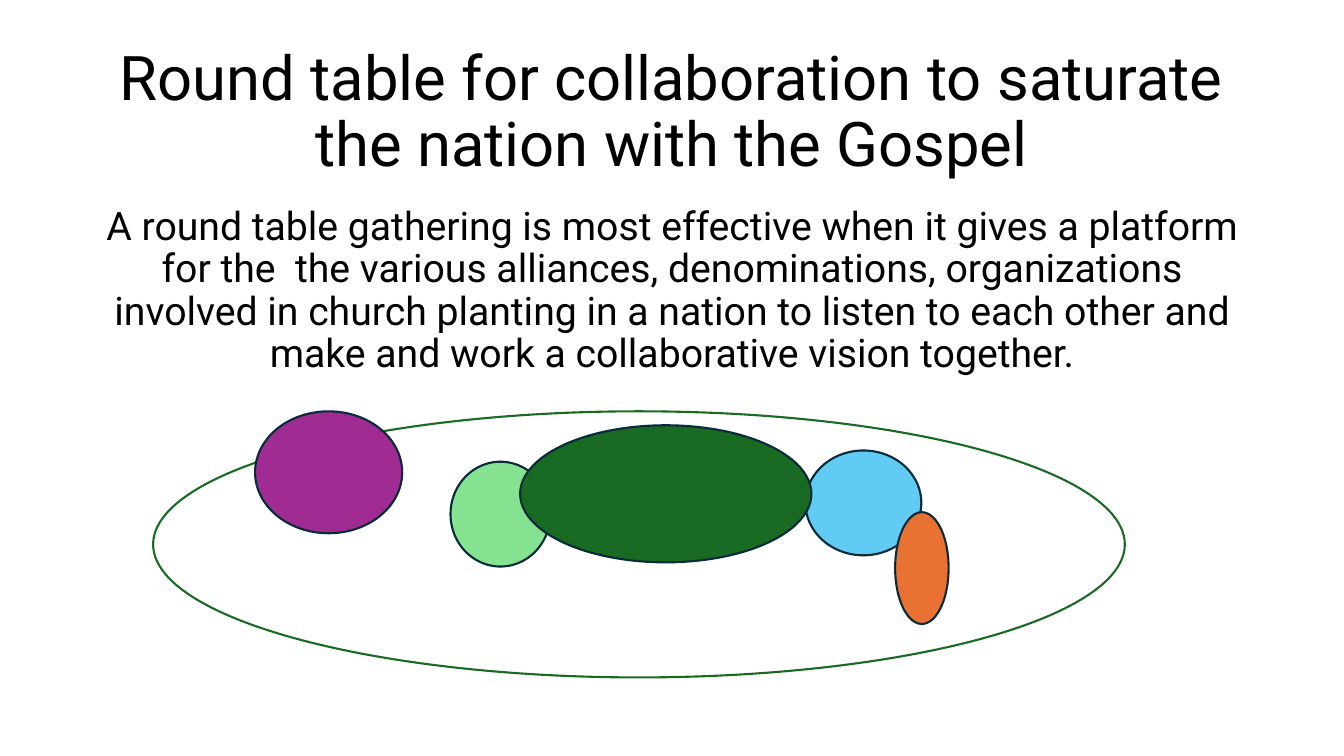
from pptx import Presentation
from pptx.dml.color import RGBColor
from pptx.enum.shapes import MSO_SHAPE
from pptx.enum.text import MSO_ANCHOR, MSO_AUTO_SIZE, PP_ALIGN
from pptx.util import Pt

COLORS = {
    "text": "000000", "white": "FFFFFF", "outline": "092A39",
    "green": "196B24", "purple": "A02B93", "mint": "84E291",
    "sky": "61CBF4", "orange": "E97132",
}


def color(name):
    return RGBColor.from_string(COLORS[name])


def write(shape, text, size, anchor):
    tf = shape.text_frame
    tf.word_wrap = True
    tf.auto_size = MSO_AUTO_SIZE.NONE
    tf.vertical_anchor = anchor
    p = tf.paragraphs[0]
    p.text = text
    p.alignment = PP_ALIGN.CENTER
    p.line_spacing = 0.9
    p.space_before = Pt(0)
    p.font.name = "Roboto"
    p.font.size = Pt(size)
    p.font.color.rgb = color("text")


prs = Presentation()
prs.slide_width, prs.slide_height = Pt(960), Pt(540)
s = prs.slides.add_slide(prs.slide_layouts[5])

# Title
title = s.shapes.title
title.left, title.top, title.width, title.height = Pt(66), Pt(28.8), Pt(828), Pt(104.4)
write(title, "Round table for collaboration to saturate the nation with the Gospel",
      44, MSO_ANCHOR.MIDDLE)

# Body text
body = s.shapes.add_textbox(Pt(66), Pt(144), Pt(828), Pt(342.7))
write(body, "A round table gathering is most effective when it gives a platform "
      "for the  the various alliances, denominations, organizations involved in "
      "church planting in a nation to listen to each other and make and work a "
      "collaborative vision together.", 28, MSO_ANCHOR.TOP)

# Round table and its participants, back to front: left, top, width, height, fill, line
ellipses = [
    (109.4, 293.8, 694.1, 190.1, "white", "green"),
    (182.2, 293.8, 105.1, 87.1, "purple", "outline"),
    (321.8, 329.8, 71.3, 74.9, "mint", "outline"),
    (575.3, 321.8, 82.8, 74.9, "sky", "outline"),
    (639.4, 365.8, 38.2, 79.9, "orange", "outline"),
    (371.5, 303.8, 208.1, 97.9, "green", "outline"),
]
for left, top, width, height, fill, line in ellipses:
    sp = s.shapes.add_shape(MSO_SHAPE.OVAL, Pt(left), Pt(top), Pt(width), Pt(height))
    sp.shadow.inherit = False
    sp.fill.solid()
    sp.fill.fore_color.rgb = color(fill)
    sp.line.color.rgb = color(line)
    sp.line.width = Pt(1.5)

prs.save("out.pptx")
